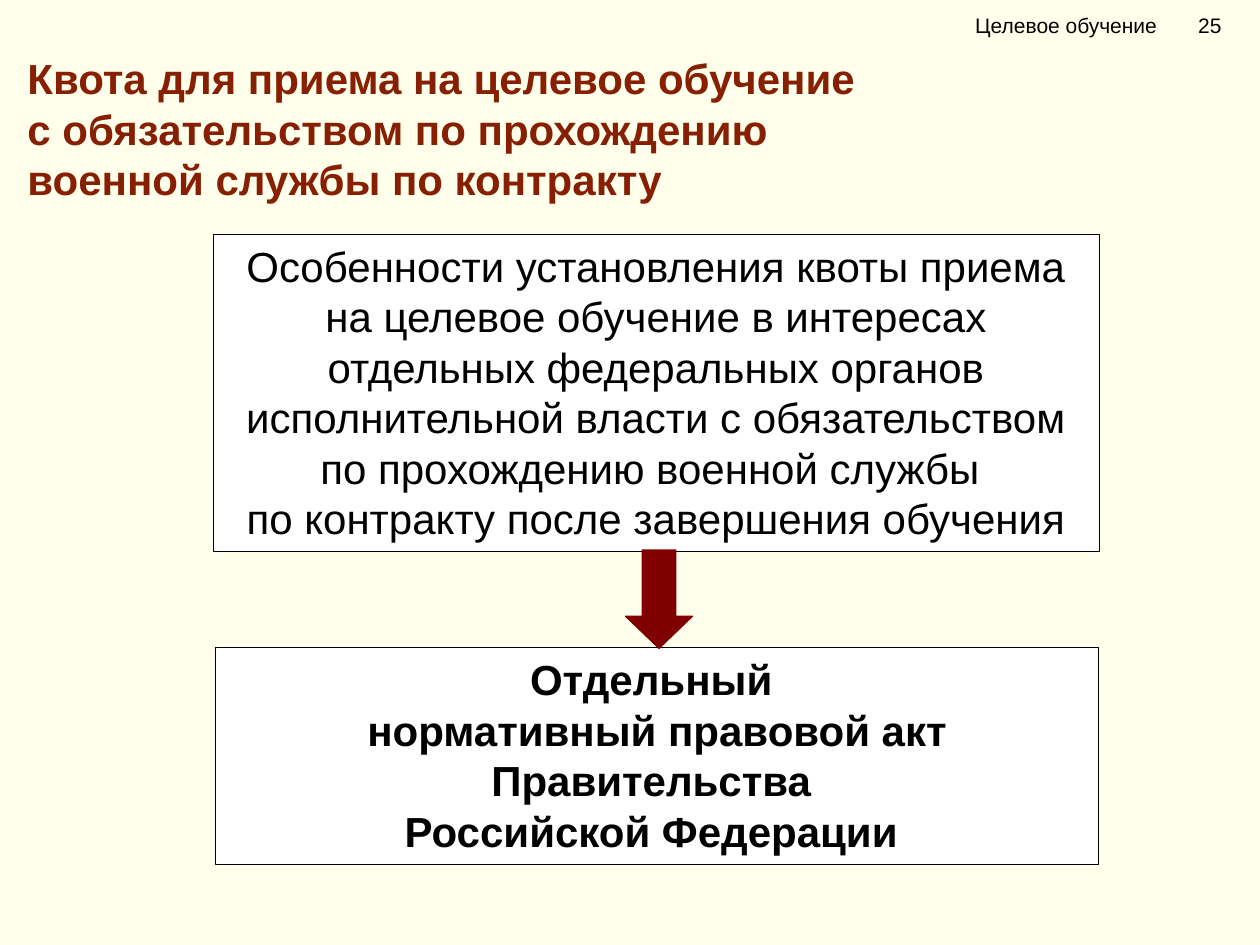
from dataclasses import dataclass

from lxml import etree
from pptx import Presentation
from pptx import util as u
from pptx.dml import color
from pptx.enum import shapes, text
from pptx.oxml import ns

FONT = "Arial"
CREAM, WHITE, BLACK = "FFFFEB", "FFFFFF", "000000"
TITLE_RED, ARROW_RED = "871F03", "800000"
LEFT, CENTER = text.PP_ALIGN.LEFT, text.PP_ALIGN.CENTER
RECTANGLE, DOWN_ARROW = shapes.MSO_SHAPE.RECTANGLE, shapes.MSO_SHAPE.DOWN_ARROW


@dataclass
class Area:
    left: float
    top: float
    width: float
    height: float

    def lengths(self):
        return [u.Pt(v) for v in (self.left, self.top, self.width, self.height)]


@dataclass
class Statement:
    area: Area
    lines: list[str]
    bold: bool = False


TITLE = [
    "Квота для приема на целевое обучение",
    "с обязательством по прохождению",
    "военной службы по контракту",
]
STATEMENTS = [
    Statement(
        Area(121.7, 133.9, 506.2, 181.4),
        [
            "Особенности установления квоты приема на целевое обучение "
            "в интересах отдельных федеральных органов исполнительной власти "
            "с обязательством по прохождению военной службы ",
            "по контракту после завершения обучения",
        ],
    ),
    Statement(
        Area(123.1, 370.1, 504.7, 123.8),
        [
            "Отдельный ",
            "нормативный правовой акт",
            "Правительства ",
            "Российской Федерации ",
        ],
        bold=True,
    ),
]


def paint(target, value: str) -> None:
    target.solid()
    target.fore_color.rgb = color.RGBColor.from_string(value)


def write(box, lines: list[str], *, size=24, ink=BLACK, bold=False, align=LEFT,
          anchor=text.MSO_ANCHOR.TOP, margin=7.2) -> None:
    frame = box.text_frame
    frame.word_wrap = True
    frame.vertical_anchor = anchor
    frame.margin_left = u.Pt(margin)
    for index, line in enumerate(lines):
        para = frame.add_paragraph() if index else frame.paragraphs[0]
        para.alignment = align
        span = para.add_run()
        span.text = line
        span.font.name = FONT
        span.font.size = u.Pt(size)
        span.font.bold = bold
        span.font.color.rgb = color.RGBColor.from_string(ink)


def add_tab(para, position: float) -> None:
    tabs = etree.SubElement(para._p.get_or_add_pPr(), ns.qn("a:tabLst"))
    etree.SubElement(tabs, ns.qn("a:tab"), pos=str(u.Pt(position)), algn="l")


def add_figure(page, kind, area: Area, fill: str, line: str, weight: float):
    figure = page.shapes.add_shape(kind, *area.lengths())
    figure.shadow.inherit = False
    paint(figure.fill, fill)
    paint(figure.line.fill, line)
    figure.line.width = u.Pt(weight)
    return figure


def add_header(page) -> None:
    box = page.shapes.add_textbox(*Area(535.7, 0, 184.3, 28.8).lengths())
    write(box, ["Целевое обучение\t25"], size=12,
          anchor=text.MSO_ANCHOR.MIDDLE, margin=21.6)
    add_tab(box.text_frame.paragraphs[0], 127.4)


def main() -> None:
    """Build the slide on the quota for targeted training."""
    deck = Presentation()
    deck.slide_width, deck.slide_height = u.Pt(720), u.Pt(540)
    page = deck.slides.add_slide(deck.slide_layouts[6])
    paint(page.background.fill, CREAM)

    title = page.shapes.add_textbox(*Area(8.6, 26.6, 711.4, 33.8).lengths())
    write(title, TITLE, ink=TITLE_RED, bold=True)
    add_header(page)

    for statement in STATEMENTS:
        box = add_figure(page, RECTANGLE, statement.area, WHITE, BLACK, 0.25)
        write(box, statement.lines, bold=statement.bold, align=CENTER)

    arrow = add_figure(page, DOWN_ARROW, Area(357.5, 314.3, 38.2, 56.2),
                       ARROW_RED, ARROW_RED, 0.75)
    arrow.adjustments[0], arrow.adjustments[1] = 0.5, 0.48

    deck.save("out.pptx")


if __name__ == "__main__":
    main()
